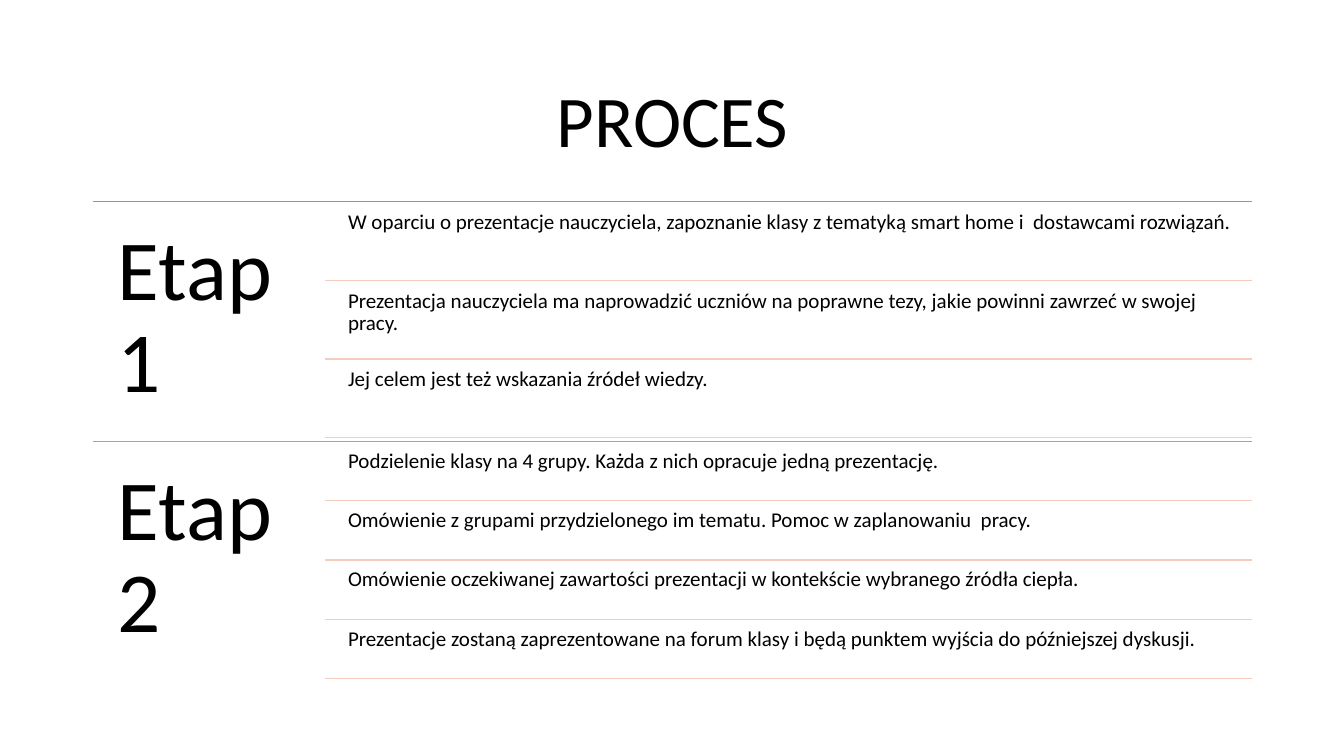
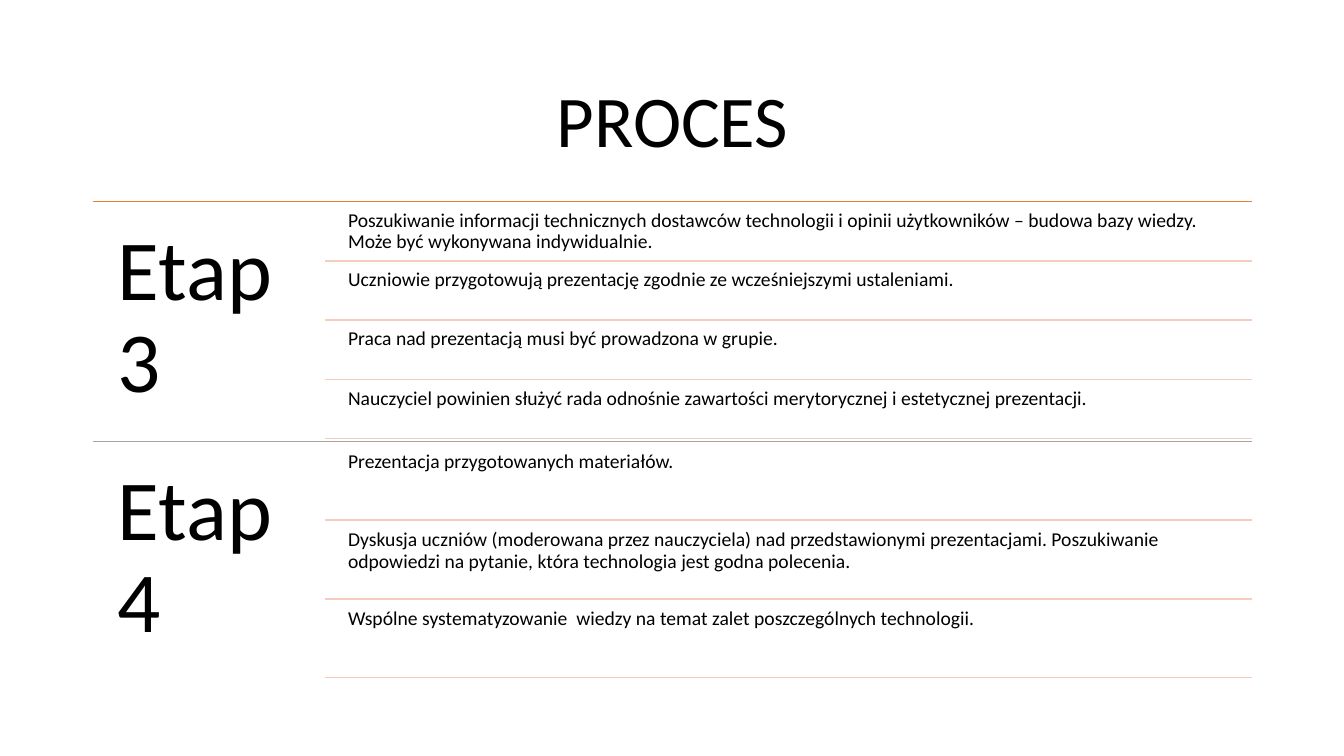
from typing import NamedTuple

from lxml.etree import SubElement
from pptx import Presentation
from pptx.dml.color import RGBColor
from pptx.enum.shapes import MSO_CONNECTOR
from pptx.enum.text import MSO_ANCHOR, MSO_AUTO_SIZE, PP_ALIGN
from pptx.oxml.ns import qn
from pptx.util import Inches, Pt

BLACK = RGBColor(0x00, 0x00, 0x00)
ORANGE = RGBColor(0xED, 0x7D, 0x31)
GREY = RGBColor(0xA5, 0xA5, 0xA5)
PEACH = RGBColor(0xF6, 0xCC, 0xBE)

FONT = "Calibri"
TITLE_SIZE, STAGE_SIZE = 52, 61
STAGE_INSET, STEP_INSET = 0.25, 0.06
STAGE_SHARE = 0.2
INDENT_SHARE = 0.015
GAP_SHARE = 0.05
STAGE_RULES = (ORANGE, GREY)


class Box(NamedTuple):
    """A rectangle in inches."""

    left: float
    top: float
    width: float
    height: float

    def lengths(self):
        """Return the four measures as slide lengths."""
        return [Inches(value) for value in self]


TITLE_BOX = Box(0.92, 0.61, 11.5, 1.24)
PROCESS_BOX = Box(0.92, 2, 11.5, 4.76)

SLIDES = [
    (15, [
        ("Etap 1", [
            "W oparciu o prezentacje nauczyciela, zapoznanie klasy z tematyką smart home i  dostawcami rozwiązań.",
            "Prezentacja nauczyciela ma naprowadzić uczniów na poprawne tezy, jakie powinni zawrzeć w swojej pracy.",
            "Jej celem jest też wskazania źródeł wiedzy.",
        ]),
        ("Etap 2", [
            "Podzielenie klasy na 4 grupy. Każda z nich opracuje jedną prezentację.",
            "Omówienie z grupami przydzielonego im tematu. Pomoc w zaplanowaniu  pracy.",
            "Omówienie oczekiwanej zawartości prezentacji w kontekście wybranego źródła ciepła.",
            "Prezentacje zostaną zaprezentowane na forum klasy i będą punktem wyjścia do późniejszej dyskusji.",
        ]),
    ]),
    (14, [
        ("Etap 3", [
            "Poszukiwanie informacji technicznych dostawców technologii i opinii użytkowników – budowa bazy wiedzy. "
            "Może być wykonywana indywidualnie.",
            "Uczniowie przygotowują prezentację zgodnie ze wcześniejszymi ustaleniami.",
            "Praca nad prezentacją musi być prowadzona w grupie.",
            "Nauczyciel powinien służyć rada odnośnie zawartości merytorycznej i estetycznej prezentacji.",
        ]),
        ("Etap 4", [
            "Prezentacja przygotowanych materiałów.",
            "Dyskusja uczniów (moderowana przez nauczyciela) nad przedstawionymi prezentacjami. "
            "Poszukiwanie odpowiedzi na pytanie, która technologia jest godna polecenia.",
            "Wspólne systematyzowanie  wiedzy na temat zalet poszczególnych technologii.",
        ]),
    ]),
]


def write(frame, wording, size, align=PP_ALIGN.LEFT):
    """Fill a text frame with one paragraph in the shared style."""
    frame.word_wrap = True
    frame.auto_size = MSO_AUTO_SIZE.NONE
    frame.text = wording
    paragraph = frame.paragraphs[0]
    paragraph.alignment = align
    paragraph.line_spacing = 0.9
    paragraph.font.name = FONT
    paragraph.font.size = Pt(size)
    paragraph.font.color.rgb = BLACK


def add_label(shapes, box, wording, size, inset):
    """Add top-anchored text with equal insets on all sides."""
    frame = shapes.add_textbox(*box.lengths()).text_frame
    frame.margin_left = frame.margin_right = Inches(inset)
    frame.margin_top = frame.margin_bottom = Inches(inset)
    frame.vertical_anchor = MSO_ANCHOR.TOP
    write(frame, wording, size)


def add_rule(shapes, left, top, width, color):
    """Add a thin horizontal line without a shadow."""
    start, end, level = Inches(left), Inches(left + width), Inches(top)
    rule = shapes.add_connector(MSO_CONNECTOR.STRAIGHT, start, level, end, level)
    rule.line.color.rgb = color
    rule.line.width = Pt(1)
    SubElement(rule.element.spPr, qn("a:effectLst"))


def add_steps(shapes, box, steps, size):
    """Stack the steps of a stage, each closed by a rule."""
    count = len(steps)
    row = box.height / (count + GAP_SHARE * (count + 1))
    gap = row * GAP_SHARE
    indent = PROCESS_BOX.width * INDENT_SHARE
    for index, step in enumerate(steps):
        top = box.top + gap + index * (row + gap)
        step_box = Box(box.left + indent, top, box.width - indent, row)
        add_label(shapes, step_box, step, size, STEP_INSET)
        add_rule(shapes, box.left, top + row, box.width, PEACH)


def add_stage(shapes, box, name, steps, size, color):
    """Add a stage: top rule, large name on the left, steps on the right."""
    name_width = box.width * STAGE_SHARE
    add_rule(shapes, box.left, box.top, box.width, color)
    add_label(shapes, box._replace(width=name_width), name, STAGE_SIZE, STAGE_INSET)
    steps_box = box._replace(left=box.left + name_width, width=box.width - name_width)
    add_steps(shapes, steps_box, steps, size)


def add_title(slide, box, wording):
    """Place and style the title placeholder."""
    title = slide.shapes.title
    title.left, title.top, title.width, title.height = box.lengths()
    title.text_frame.vertical_anchor = MSO_ANCHOR.MIDDLE
    write(title.text_frame, wording, TITLE_SIZE, PP_ALIGN.CENTER)


def add_process_slide(deck, stages, size):
    """Add a titled slide whose stages share the process box equally."""
    slide = deck.slides.add_slide(deck.slide_layouts.get_by_name("Title Only"))
    add_title(slide, TITLE_BOX, "PROCES")
    shapes = slide.shapes.add_group_shape().shapes
    height = PROCESS_BOX.height / len(stages)
    for index, ((name, steps), color) in enumerate(zip(stages, STAGE_RULES)):
        stage_box = PROCESS_BOX._replace(top=PROCESS_BOX.top + index * height, height=height)
        add_stage(shapes, stage_box, name, steps, size, color)


def main():
    """Build and save the presentation."""
    deck = Presentation()
    deck.slide_width, deck.slide_height = Inches(13.33), Inches(7.5)
    for size, stages in SLIDES:
        add_process_slide(deck, stages, size)
    deck.save("out.pptx")


if __name__ == "__main__":
    main()
